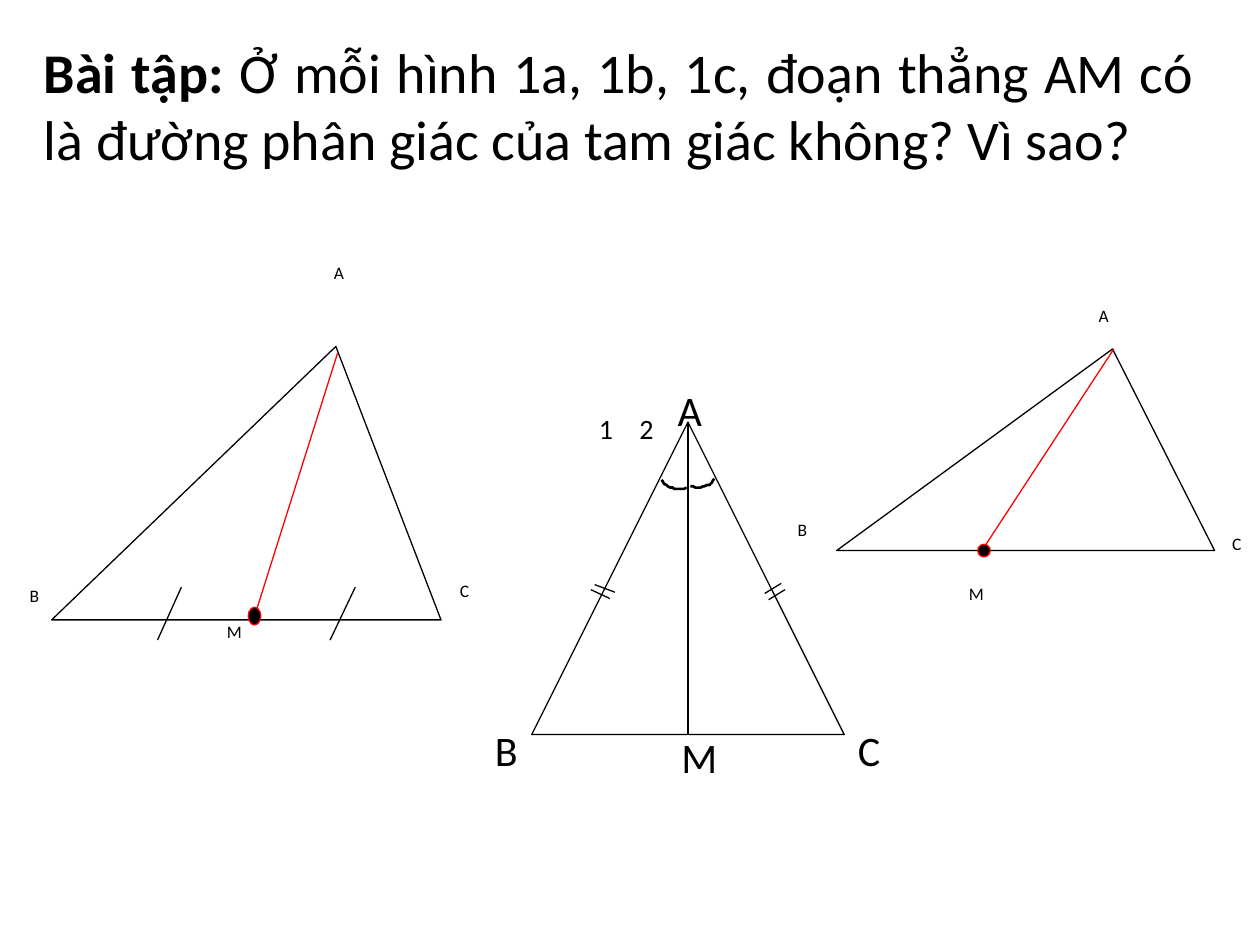
from lxml import etree
from pptx import Presentation
from pptx.dml.color import RGBColor
from pptx.enum.shapes import MSO_CONNECTOR, MSO_SHAPE
from pptx.enum.text import MSO_ANCHOR, PP_ALIGN
from pptx.oxml.ns import qn
from pptx.util import Emu, Pt

PX = 9144
STRAIGHT = MSO_CONNECTOR.STRAIGHT
RECTANGLE, TRIANGLE, OVAL = MSO_SHAPE.RECTANGLE, MSO_SHAPE.ISOSCELES_TRIANGLE, MSO_SHAPE.OVAL
TOP = MSO_ANCHOR.TOP
LEFT, CENTER, RIGHT, JUSTIFY = PP_ALIGN.LEFT, PP_ALIGN.CENTER, PP_ALIGN.RIGHT, PP_ALIGN.JUSTIFY
COLORS = {"ink": "000000", "paper": "FFFFFF", "bisector": "FF0000"}

prs = Presentation()
prs.slide_width, prs.slide_height = Emu(1000 * PX), Emu(750 * PX)
slide = prs.slides.add_slide(prs.slide_layouts[6])
shapes = slide.shapes


def add_text(text, box, size=10, align=LEFT, lead="", patch=False):
    frame_box = [Emu(value * PX) for value in box]
    if patch:
        holder = shapes.add_shape(RECTANGLE, *frame_box)
        style(holder, fill="paper", line=None)
    else:
        holder = shapes.add_textbox(*frame_box)
    frame = holder.text_frame
    frame.word_wrap = True
    frame.vertical_anchor = TOP
    paragraph = frame.paragraphs[0]
    paragraph.alignment = align
    if patch:
        frame.margin_left = frame.margin_right = frame.margin_top = frame.margin_bottom = 0
        paragraph.space_after = Pt(10)
    for words, bold in ((lead, True), (text, False)):
        if words:
            run = paragraph.add_run()
            run.text = words
            run.font.name = "Calibri"
            run.font.size = Pt(size)
            run.font.bold = bold
            run.font.color.rgb = RGBColor.from_string(COLORS["ink"])


def style(shape, fill=None, line="ink", width=0.75):
    if hasattr(shape, "shadow"):
        shape.shadow.inherit = False
    else:
        etree.SubElement(shape._element.spPr, qn("a:effectLst"))
    if fill:
        shape.fill.solid()
        shape.fill.fore_color.rgb = RGBColor.from_string(COLORS[fill])
    elif hasattr(shape, "fill"):
        shape.fill.background()
    if line:
        shape.line.color.rgb = RGBColor.from_string(COLORS[line])
        shape.line.width = Pt(width)
    else:
        shape.line.fill.background()


add_text("Ở mỗi hình 1a, 1b, 1c, đoạn thẳng AM có là đường phân giác của tam giác không? Vì sao?",
         (25, 25, 933, 118), size=32, align=JUSTIFY, lead="Bài tập: ")

for vertex, left, top in (("A", 528, 300), ("B", 383, 570), ("C", 671, 570), ("M", 531, 576)):
    add_text(vertex, (left, top, 54, 40), size=24)
for angle, left in (("1", 460), ("2", 492)):
    add_text(angle, (left, 322, 42, 37), size=16, align=CENTER)

for vertex, box, align in (
    ("M", (180, 493, 38, 65), LEFT),
    ("B", (0, 464, 31, 57), RIGHT),
    ("C", (365, 460, 27, 59), LEFT),
    ("A", (265, 208, 38, 65), LEFT),
    ("B", (633, 412, 29, 39), LEFT),
    ("M", (769, 463, 27, 38), LEFT),
    ("C", (978, 423, 37, 38), LEFT),
    ("A", (872, 242, 38, 30), LEFT),
):
    add_text(vertex, box, align=align, patch=True)

for box, apex, fill in (
    ((422, 335, 248, 248), 0.5, None),
    ((41, 275, 309, 217), 0.73, "paper"),
    ((664, 277, 300, 160), 0.73, "paper"),
):
    triangle = shapes.add_shape(TRIANGLE, *[Emu(value * PX) for value in box])
    triangle.adjustments[0] = apex
    style(triangle, fill=fill)

segments = {
    "ink": (
        (546, 335, 546, 583),
        (469, 468, 484, 475), (472, 464, 488, 470),
        (623, 468, 610, 476), (620, 463, 607, 471),
        (144, 466, 125, 508), (282, 466, 262, 508),
    ),
    "bisector": ((268, 280, 203, 486), (884, 277, 778, 439)),
}
for color, ends in segments.items():
    for end in ends:
        segment = shapes.add_connector(STRAIGHT, *[Emu(value * PX) for value in end])
        style(segment, line=color)

STEPS = 12
for curve in (
    ((545, 387), (537, 390), (529, 387), (525, 381)),
    ((567, 380), (564, 386), (556, 388), (548, 386)),
):
    points = []
    for step in range(STEPS + 1):
        t = step / STEPS
        weights = ((1 - t) ** 3, 3 * t * (1 - t) ** 2, 3 * t ** 2 * (1 - t), t ** 3)
        points.append(tuple(sum(w * p[axis] for w, p in zip(weights, curve)) for axis in (0, 1)))
    builder = shapes.build_freeform(*points[0], scale=PX)
    builder.add_line_segments(points[1:], close=False)
    # the scale above keeps the curve in slide units
    style(builder.convert_to_shape(), width=1.5)

for box in ((197, 482, 10, 14), (776, 432, 10, 10)):
    midpoint = shapes.add_shape(OVAL, *[Emu(value * PX) for value in box])
    style(midpoint, fill="ink", line="bisector")

prs.save("out.pptx")
